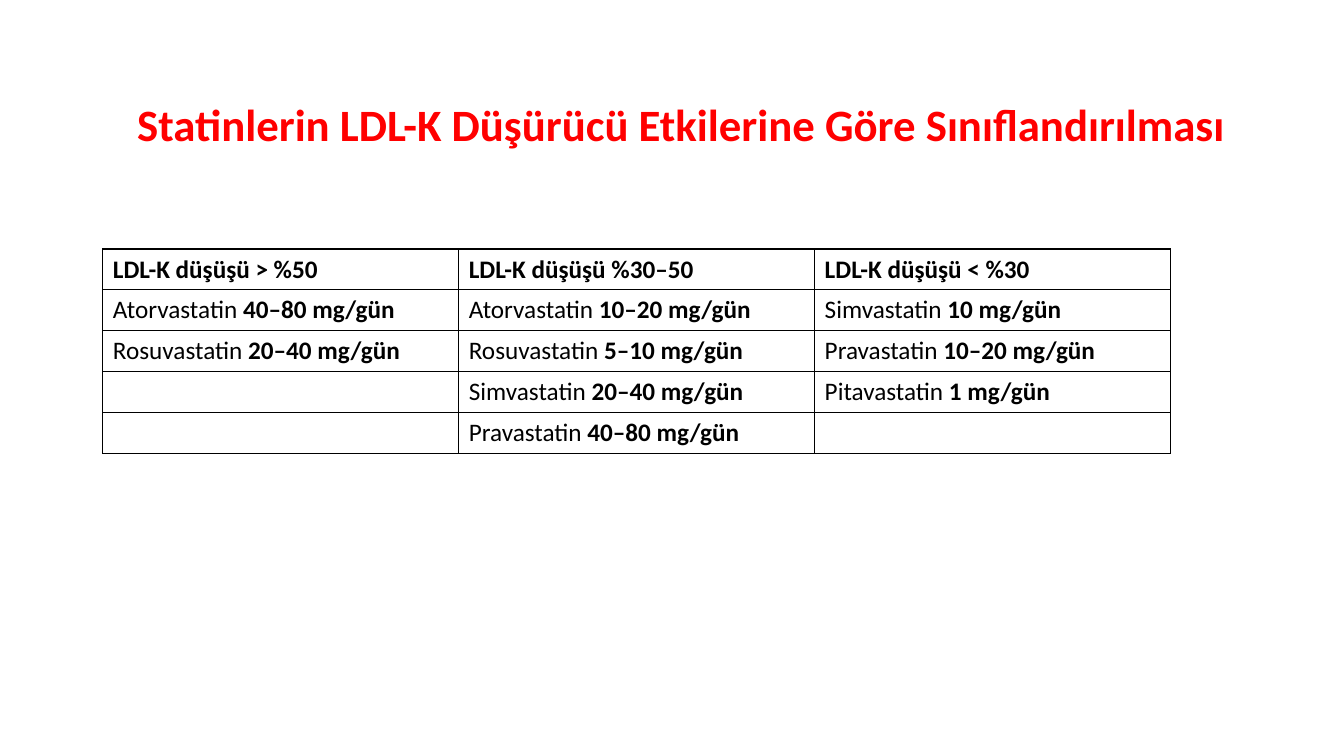
import pptx
import pptx.dml.color
import pptx.enum.text
import pptx.oxml
import pptx.oxml.ns
import pptx.util
from pptx.util import Inches

RED = pptx.dml.color.RGBColor(0xFF, 0x00, 0x00)
BLACK = pptx.dml.color.RGBColor(0x00, 0x00, 0x00)
MIDDLE = pptx.enum.text.MSO_ANCHOR.MIDDLE

HEADS = ["LDL-K düşüşü > %50", "LDL-K düşüşü %30–50", "LDL-K düşüşü < %30"]
DOSES = [
    [("Atorvastatin", "40–80"), ("Rosuvastatin", "20–40")],
    [("Atorvastatin", "10–20"), ("Rosuvastatin", "5–10"),
     ("Simvastatin", "20–40"), ("Pravastatin", "40–80")],
    [("Simvastatin", "10"), ("Pravastatin", "10–20"), ("Pitavastatin", "1")],
]


def add_text(para, text, size=18, color=BLACK, bold=True):
    run = para.add_run()
    run.text = text
    run.font.name = "Calibri"
    run.font.size = pptx.util.Pt(size)
    run.font.color.rgb = color
    run.font.bold = bold


def add_border(cell):
    """Draw a thin black line on all four sides of the cell."""
    props = cell._tc.get_or_add_tcPr()
    for place, side in enumerate(["lnL", "lnR", "lnT", "lnB"]):
        props.insert(place, pptx.oxml.parse_xml(
            f'<a:{side} {pptx.oxml.ns.nsdecls("a")} w="12700"><a:solidFill>'
            f'<a:srgbClr val="{BLACK}"/></a:solidFill></a:{side}>'))


deck = pptx.Presentation()
deck.slide_width = Inches(13.33)
deck.slide_height = Inches(7.5)
slide = deck.slides.add_slide(deck.slide_layouts[5])

title = slide.shapes.title
title.left, title.top = Inches(1.26), Inches(0.67)
title.width, title.height = Inches(11.03), Inches(1.18)
frame = title.text_frame
frame.auto_size = pptx.enum.text.MSO_AUTO_SIZE.NONE
frame.vertical_anchor = MIDDLE
head = frame.paragraphs[0]
head.alignment = pptx.enum.text.PP_ALIGN.LEFT
head.line_spacing = 0.9
add_text(head, "Statinlerin LDL-K Düşürücü Etkilerine Göre Sınıflandırılması",
         size=32, color=RED)

rows = 1 + max(len(drugs) for drugs in DOSES)
table = slide.shapes.add_table(rows, len(HEADS), Inches(1.02), Inches(2.47),
                               Inches(10.59), Inches(0.4 * rows)).table
table.horz_banding = False
table.first_row = False
for cell in table.iter_cells():
    cell.fill.background()
    cell.vertical_anchor = MIDDLE
    add_border(cell)

for col, (label, drugs) in enumerate(zip(HEADS, DOSES)):
    add_text(table.cell(0, col).text_frame.paragraphs[0], label)
    for row, (drug, dose) in enumerate(drugs, 1):
        para = table.cell(row, col).text_frame.paragraphs[0]
        add_text(para, f"{drug} ", bold=False)
        add_text(para, f"{dose} mg/gün")

deck.save("out.pptx")
